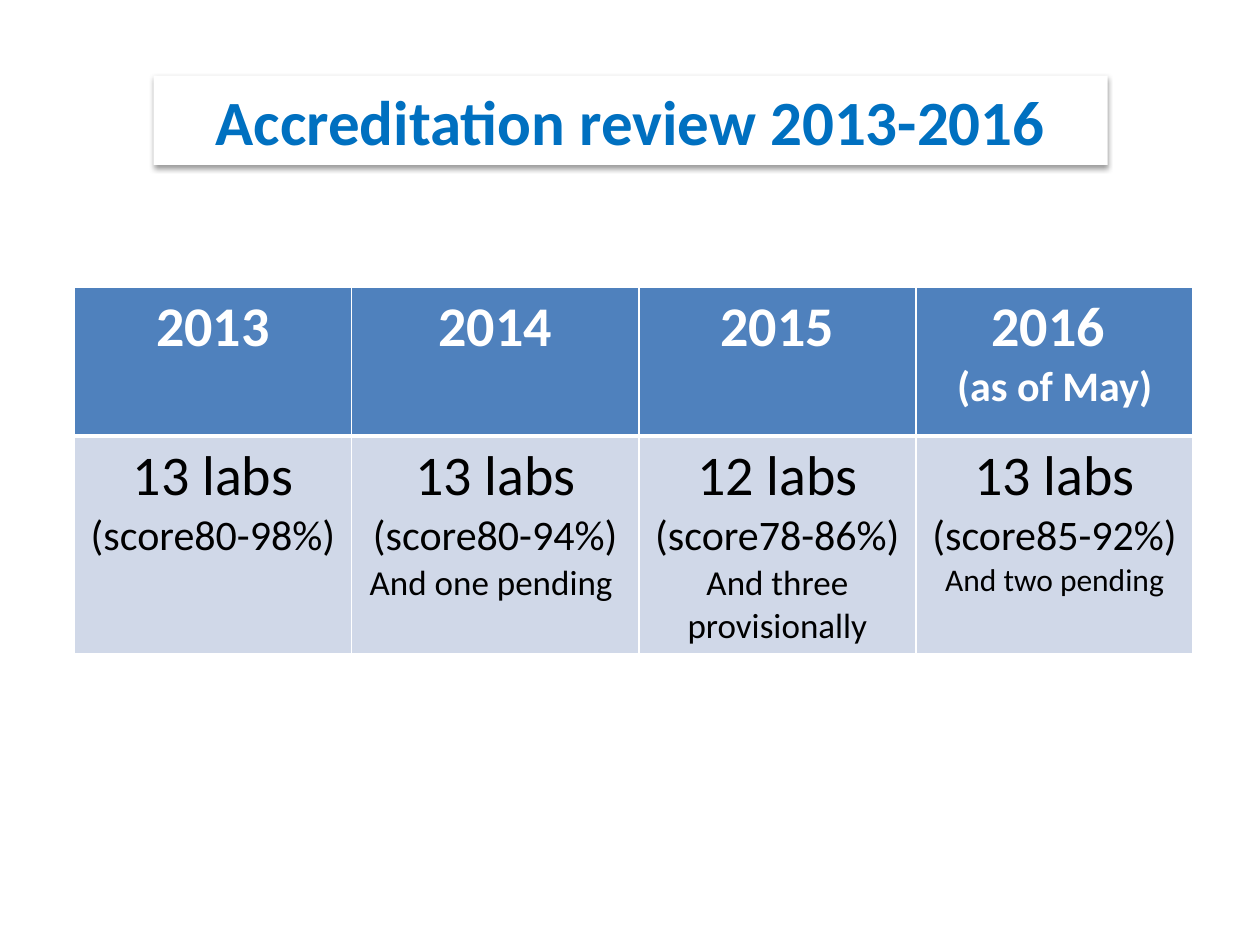
from lxml import etree
from pptx import Presentation
from pptx.dml.color import RGBColor
from pptx.enum.text import MSO_ANCHOR, PP_ALIGN
from pptx.oxml.ns import qn
from pptx.util import Inches, Pt

CENTER = PP_ALIGN.CENTER
MIDDLE = MSO_ANCHOR.MIDDLE
FONT = "Calibri"
WHITE, BLACK, BLUE = "FFFFFF", "000000", "0070C0"
HEADER_FILL, BODY_FILL = "4F81BD", "D0D8E8"
COLUMN_WIDTHS = [2.2, 2.28, 2.2, 2.2]
ROW_HEIGHTS = [1.18, 1.7]
HEADERS = [
    [("2013", 32)],
    [("2014", 32)],
    [("2015", 32)],
    [("2016 ", 32), ("(as of May)", 24)],
]
RESULTS = [
    [("13 labs", 32), ("(score80-98%)", 24)],
    [("13 labs", 32), ("(score80-94%)", 24), ("And one pending ", 20)],
    [("12 labs", 32), ("(score78-86%)", 24), ("And three provisionally", 20)],
    [("13 labs", 32), ("(score85-92%)", 24), ("And two pending", 18)],
]


def rgb(value):
    """Turn a hex string into a colour."""
    return RGBColor.from_string(value)


def fill_solid(target, color):
    """Give a shape or cell a solid fill."""
    target.fill.solid()
    target.fill.fore_color.rgb = rgb(color)


def add_text(p, text, size=32, color=BLACK, bold=False):
    """Write one centred run into a paragraph."""
    p.alignment = CENTER
    r = p.add_run()
    r.text = text
    r.font.name, r.font.size, r.font.bold = FONT, Pt(size), bold
    r.font.color.rgb = rgb(color)


def add_color(parent, color):
    """Append a colour element to an XML parent and return it."""
    return etree.SubElement(parent, qn("a:srgbClr"), val=color)


def add_shadow(sp, color, alpha, blur, distance, angle):
    """Give a shape an outer shadow."""
    effects = etree.SubElement(sp._element.spPr, qn("a:effectLst"))
    shadow = etree.SubElement(
        effects, qn("a:outerShdw"), blurRad=str(Pt(blur)), dist=str(Pt(distance)),
        dir=str(angle * 60000), rotWithShape="0")
    etree.SubElement(add_color(shadow, color), qn("a:alpha"), val=str(alpha * 1000))


def set_borders(cell, color, **widths):
    """Draw the cell edges L, R, T and B at the given widths in points."""
    tc_pr = cell._tc.get_or_add_tcPr()
    for index, (side, width) in enumerate(widths.items()):
        line = etree.Element(qn(f"a:ln{side}"), w=str(Pt(width)))
        add_color(etree.SubElement(line, qn("a:solidFill")), color)
        tc_pr.insert(index, line)


def build_title(s, left, top, width, height):
    """Place the raised title panel."""
    sp = s.shapes.title
    sp.left, sp.top = Inches(left), Inches(top)
    sp.width, sp.height = Inches(width), Inches(height)
    fill_solid(sp, WHITE)
    add_shadow(sp, BLACK, alpha=38, blur=3.1, distance=1.6, angle=90)
    tf = sp.text_frame
    tf.word_wrap, tf.vertical_anchor = True, MIDDLE
    add_text(tf.paragraphs[0], "Accreditation review 2013-2016", size=36, color=BLUE, bold=True)


def fill_cell(cell, lines, fill, color, bold, top, bottom):
    """Write a cell's paragraphs and set its fill and edges."""
    fill_solid(cell, fill)
    set_borders(cell, WHITE, L=1, R=1, T=top, B=bottom)
    tf = cell.text_frame
    for index, (text, size) in enumerate(lines):
        p = tf.add_paragraph() if index else tf.paragraphs[0]
        add_text(p, text, size=size, color=color, bold=bold)


def build_table(s, left, top):
    """Place the yearly results table."""
    table = s.shapes.add_table(
        len(ROW_HEIGHTS), len(COLUMN_WIDTHS), Inches(left), Inches(top),
        Inches(sum(COLUMN_WIDTHS)), Inches(sum(ROW_HEIGHTS))).table
    for column, width in zip(table.columns, COLUMN_WIDTHS):
        column.width = Inches(width)
    for row, height in zip(table.rows, ROW_HEIGHTS):
        row.height = Inches(height)
    for col, (header, result) in enumerate(zip(HEADERS, RESULTS)):
        fill_cell(table.cell(0, col), header, HEADER_FILL, WHITE, True, top=1, bottom=3)
        fill_cell(table.cell(1, col), result, BODY_FILL, BLACK, False, top=3, bottom=1)


def main():
    """Build and save the slide."""
    prs = Presentation()
    prs.slide_width, prs.slide_height = Inches(10), Inches(7.5)
    s = prs.slides.add_slide(prs.slide_layouts.get_by_name("Title Only"))
    build_table(s, 0.59, 2.28)
    build_title(s, 1.22, 0.6, 7.57, 0.71)
    prs.save("out.pptx")


if __name__ == "__main__":
    main()
